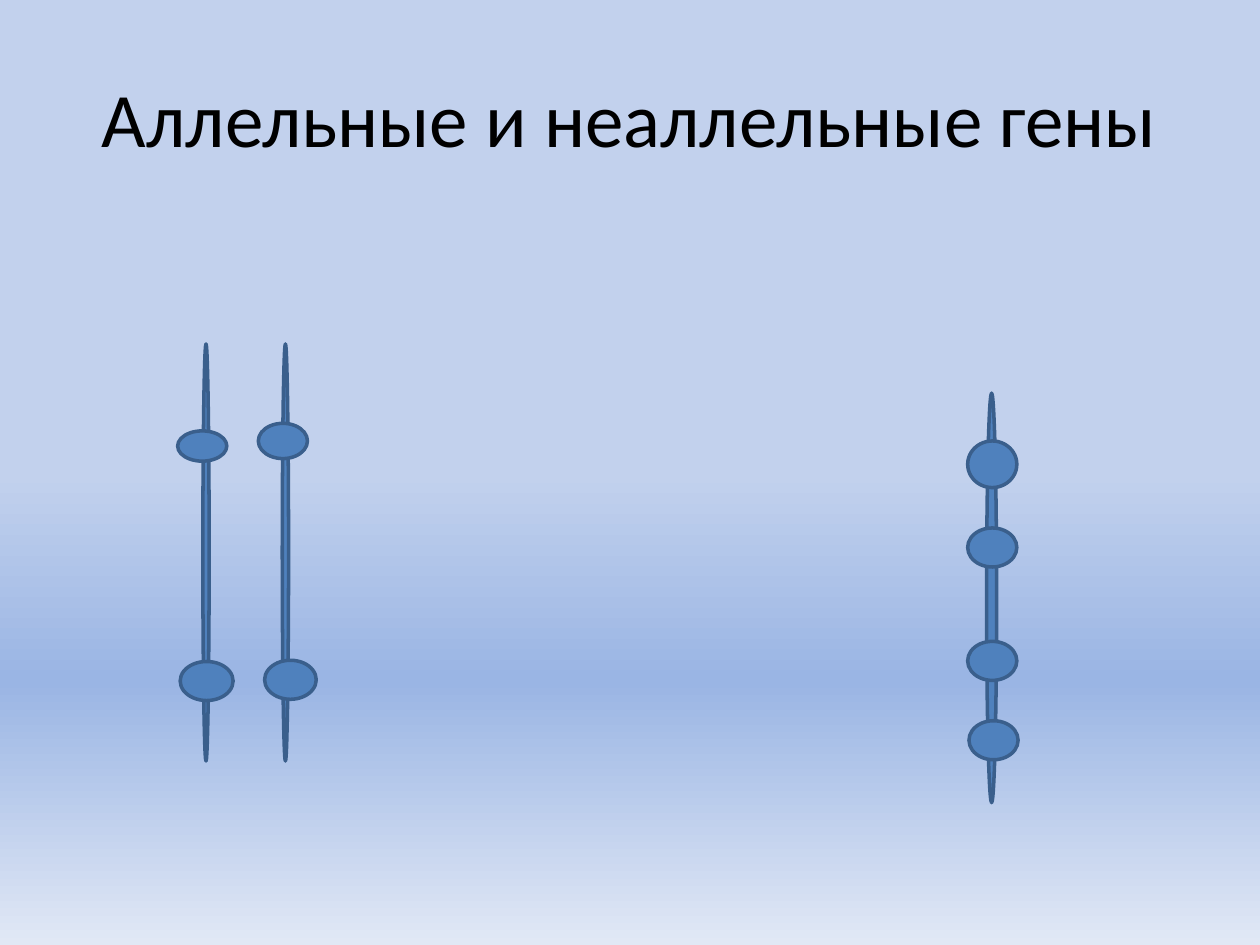
from copy import deepcopy
from dataclasses import dataclass

from pptx import Presentation
from pptx.dml.color import RGBColor
from pptx.enum.shapes import MSO_SHAPE
from pptx.enum.text import MSO_ANCHOR, PP_ALIGN
from pptx.util import Inches, Pt

OVAL = MSO_SHAPE.OVAL
MIDDLE = MSO_ANCHOR.MIDDLE
CENTER = PP_ALIGN.CENTER


@dataclass(frozen=True)
class Theme:
    font: str = "Calibri"
    title_size: int = 44
    text: str = "000000"
    fill: str = "4F81BD"
    line: str = "3A5F8C"
    line_width: int = 2
    background: tuple = ((0.5, "C2D1ED"), (0.72, "9AB5E4"), (1, "E1E8F5"))


THEME = Theme()

CHROMOSOMES = [
    (1.61, 2.73, 0.05, 3.31),
    (2.24, 2.73, 0.05, 3.31),
    (7.83, 3.12, 0.08, 3.25),
]
GENES = [
    (1.41, 3.42, 0.39, 0.24),
    (2.05, 3.36, 0.39, 0.28),
    (1.43, 5.25, 0.42, 0.31),
    (2.1, 5.24, 0.41, 0.31),
    (7.68, 3.5, 0.39, 0.37),
    (7.68, 4.19, 0.39, 0.31),
    (7.68, 5.09, 0.39, 0.31),
    (7.69, 5.72, 0.39, 0.31),
]


def rgb(value):
    return RGBColor.from_string(value)


def set_background(s):
    fill = s.background.fill
    fill.gradient()
    fill.gradient_angle = 270
    stops = s.element.xpath(".//a:gsLst")[0]
    stops.append(deepcopy(stops[-1]))
    for stop, (position, color) in zip(fill.gradient_stops, THEME.background):
        stop.position = position
        stop.color.rgb = rgb(color)


def add_title(s, text):
    box = s.shapes.add_textbox(Inches(0.5), Inches(0.3), Inches(9), Inches(1.25))
    tf = box.text_frame
    tf.word_wrap = True
    tf.vertical_anchor = MIDDLE
    p = tf.paragraphs[0]
    p.text = text
    p.alignment = CENTER
    p.font.name = THEME.font
    p.font.size = Pt(THEME.title_size)
    p.font.color.rgb = rgb(THEME.text)


def add_oval(s, bounds):
    sp = s.shapes.add_shape(OVAL, *map(Inches, bounds))
    sp.shadow.inherit = False
    sp.fill.solid()
    sp.fill.fore_color.rgb = rgb(THEME.fill)
    sp.line.color.rgb = rgb(THEME.line)
    sp.line.width = Pt(THEME.line_width)


def main():
    prs = Presentation()
    prs.slide_width = Inches(10)
    prs.slide_height = Inches(7.5)
    s = prs.slides.add_slide(prs.slide_layouts[6])
    set_background(s)
    add_title(s, "Аллельные и неаллельные гены")
    for bounds in CHROMOSOMES + GENES:
        add_oval(s, bounds)
    prs.save("out.pptx")


if __name__ == "__main__":
    main()
